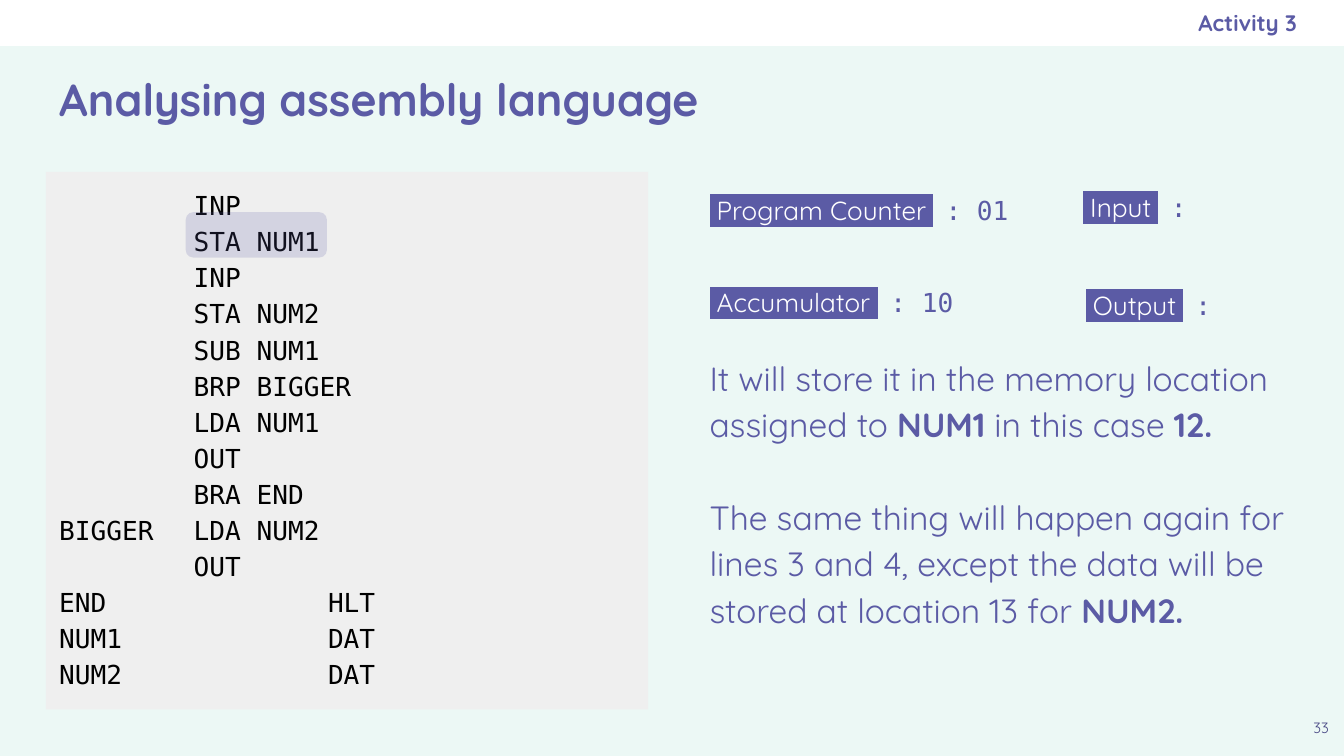
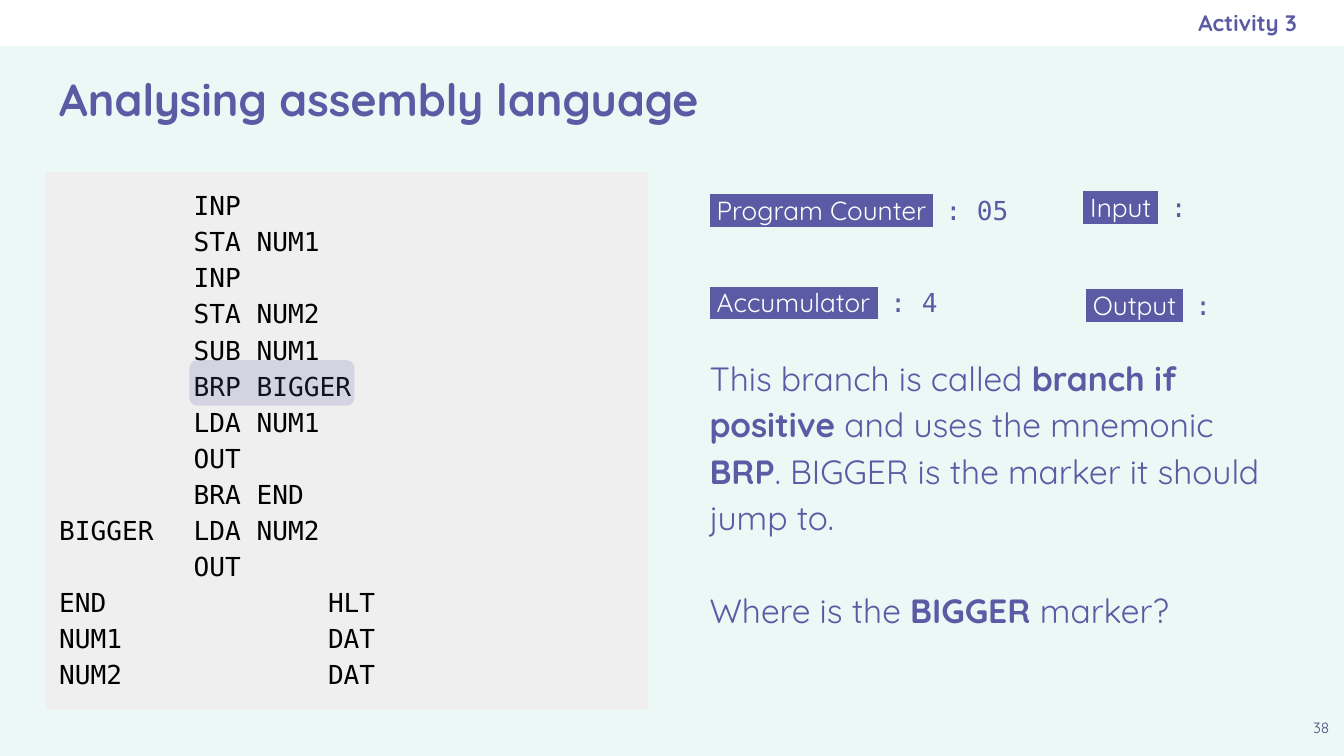
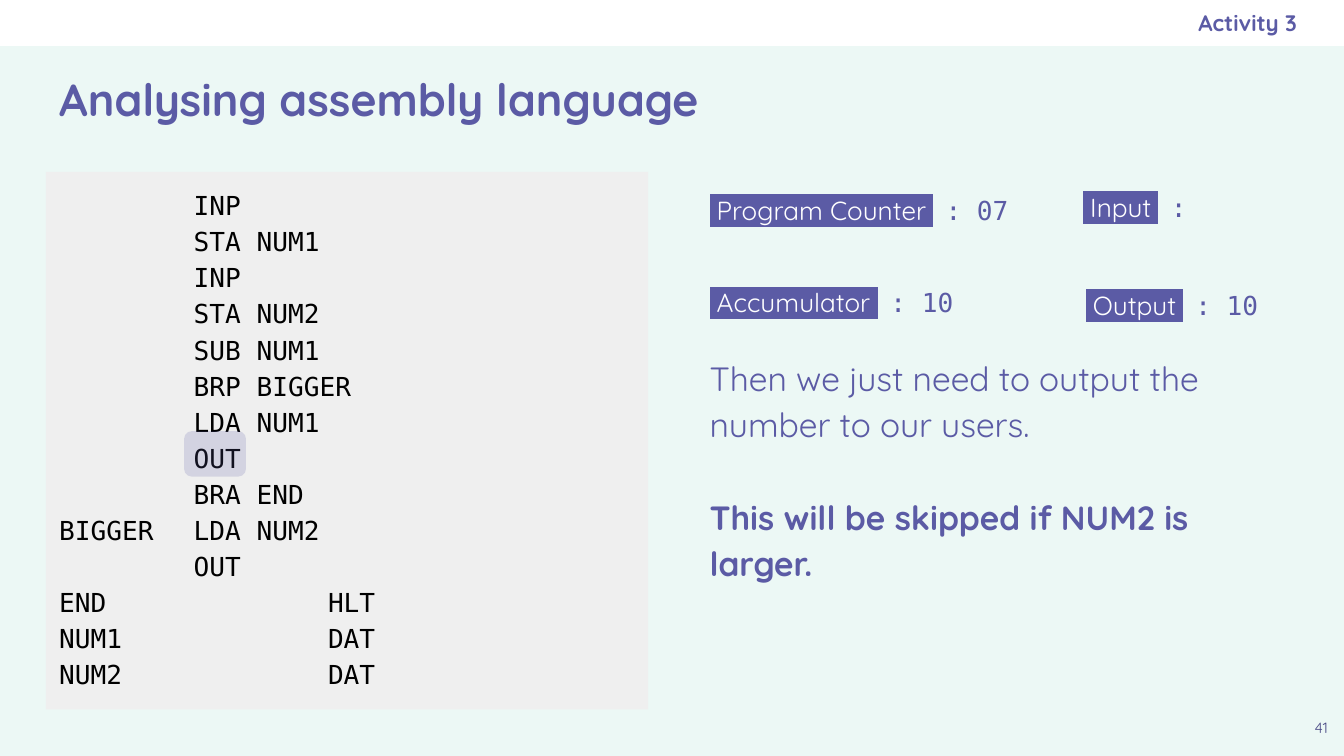
from dataclasses import dataclass

from lxml.etree import Element, SubElement
from pptx import Presentation
from pptx.dml.color import RGBColor
from pptx.enum.shapes import MSO_SHAPE
from pptx.enum.text import MSO_ANCHOR, PP_ALIGN
from pptx.oxml.ns import qn
from pptx.shapes.autoshape import Shape
from pptx.slide import Slide
from pptx.util import Cm, Pt

PURPLE = RGBColor(0x5B, 0x5B, 0xA5)
DARK_PURPLE = RGBColor(0x49, 0x49, 0x85)
MINT = RGBColor(0xEC, 0xF8, 0xF5)
GREY = RGBColor(0xEF, 0xEF, 0xEF)
WHITE = RGBColor(0xFF, 0xFF, 0xFF)
BLACK = RGBColor(0, 0, 0)

SANS = "Quicksand"
MONO = "DejaVu Sans Mono"
INSET = 0.25
TAB_WIDTH = 2.54
LINE_SPACING = 1.15
PARAGRAPH_GAP = 0.88

PROGRAM = [
    "INP",
    "STA NUM1",
    "INP",
    "STA NUM2",
    "SUB NUM1",
    "BRP BIGGER",
    "LDA NUM1",
    "OUT",
    "BRA END",
    "BIGGER \tLDA NUM2",
    "OUT",
    "END \t\tHLT",
    "NUM1\t\tDAT",
    "NUM2\t\tDAT",
]


@dataclass(frozen=True)
class Area:
    """Position and size in centimetres."""
    left: float
    top: float
    width: float
    height: float

    def lengths(self) -> tuple[Cm, Cm, Cm, Cm]:
        return Cm(self.left), Cm(self.top), Cm(self.width), Cm(self.height)


@dataclass(frozen=True)
class Span:
    text: str
    bold: bool = False


@dataclass(frozen=True)
class Register:
    name: str
    area: Area
    value_tab: float


@dataclass(frozen=True)
class Step:
    number: int
    marker: Area
    values: tuple[str, str, str, str]
    explanation: list[list[Span]]


REGISTERS = [
    Register("Program Counter", Area(13.16, 3.33, 6.2, 1.02), 4.46),
    Register("Accumulator", Area(13.16, 5.08, 6.2, 1.02), 3.42),
    Register("Input", Area(20.22, 3.28, 4.27, 1.02), 1.66),
    Register("Output", Area(20.27, 5.13, 4.27, 1.02), 2.07),
]

STEPS = [
    Step(33, Area(3.51, 4.01, 2.67, 0.86), ("01", "10", "", ""), [
        [
            Span("It will store it in the memory location assigned to "),
            Span("NUM1", True),
            Span(" in this case "),
            Span("12.", True),
        ],
        [
            Span("The same thing will happen again for lines 3 and 4, except "
                 "the data will be stored at location 13 for "),
            Span("NUM2.", True),
        ],
    ]),
    Step(38, Area(3.58, 6.81, 3.12, 0.86), ("05", "4", "", ""), [
        [
            Span("This branch is called "),
            Span("branch if positive ", True),
            Span("and uses the mnemonic "),
            Span("BRP", True),
            Span(". BIGGER is the marker it should jump to."),
        ],
        [Span("Where is the "), Span("BIGGER ", True), Span("marker?")],
    ]),
    Step(41, Area(3.48, 8.15, 1.17, 0.86), ("07", "10", "", "10"), [
        [Span("Then we just need to output the number to our users.")],
        [Span("This will be skipped if NUM2 is larger.", True)],
    ]),
]


def prepare_frame(box: Shape, anchor=MSO_ANCHOR.TOP, right: float = INSET) -> None:
    frame = box.text_frame
    frame.word_wrap = True
    frame.vertical_anchor = anchor
    frame.margin_left = frame.margin_top = frame.margin_bottom = Cm(INSET)
    frame.margin_right = Cm(right)


def add_box(page: Slide, area: Area, anchor=MSO_ANCHOR.TOP, right: float = INSET) -> Shape:
    box = page.shapes.add_textbox(*area.lengths())
    prepare_frame(box, anchor, right)
    return box


def add_panel(page: Slide, kind: MSO_SHAPE, area: Area, colour: RGBColor) -> Shape:
    panel = page.shapes.add_shape(kind, *area.lengths())
    panel.shadow.inherit = False
    panel.fill.solid()
    panel.fill.fore_color.rgb = colour
    panel.line.fill.background()
    return panel


def add_run(para, text: str, size: int, colour: RGBColor, font: str = SANS, bold: bool = False):
    run = para.add_run()
    run.text = text
    run.font.name = font
    run.font.size = Pt(size)
    run.font.bold = bold
    run.font.color.rgb = colour
    return run


def highlight(run, colour: RGBColor) -> None:
    mark = Element(qn("a:highlight"))
    SubElement(mark, qn("a:srgbClr"), val=str(colour))
    run.font._element.find(qn("a:solidFill")).addnext(mark)


def add_tabs(para, *positions: float) -> None:
    tabs = SubElement(para._p.get_or_add_pPr(), qn("a:tabLst"))
    for position in positions:
        SubElement(tabs, qn("a:tab"), pos=str(Cm(position)), algn="l")


def paragraphs(box: Shape, count: int) -> list:
    """Extend a new box to the given number of paragraphs."""
    for _ in range(count - 1):
        box.text_frame.add_paragraph()
    for para in box.text_frame.paragraphs:
        para.alignment = PP_ALIGN.LEFT
        para.line_spacing = LINE_SPACING
    return list(box.text_frame.paragraphs)


def draw_frame(page: Slide, number: int) -> None:
    """Draw the band, page number, activity name and title."""
    add_panel(page, MSO_SHAPE.RECTANGLE, Area(0, 0, 25.4, 0.87), WHITE)

    para = add_box(page, Area(24.54, 13.42, 0.86, 0.86)).text_frame.paragraphs[0]
    para.alignment = PP_ALIGN.CENTER
    add_run(para, str(number), 8, DARK_PURPLE)

    activity = add_box(page, Area(14.6, 0, 9.91, 0.87), MSO_ANCHOR.MIDDLE, right=0)
    para = activity.text_frame.paragraphs[0]
    para.alignment = PP_ALIGN.RIGHT
    add_run(para, "Activity 3", 12, PURPLE, bold=True)

    title = add_box(page, Area(0.87, 0.89, 23.67, 1.93), MSO_ANCHOR.MIDDLE)
    add_run(title.text_frame.paragraphs[0], "Analysing assembly language", 24, PURPLE, bold=True)


def draw_explanation(page: Slide, explanation: list[list[Span]]) -> None:
    box = add_box(page, Area(13.16, 6.4, 11.38, 7.04))
    for index, (para, spans) in enumerate(zip(paragraphs(box, len(explanation)), explanation)):
        if index:
            para.space_before = Cm(PARAGRAPH_GAP)
        for span in spans:
            add_run(para, span.text, 18, PURPLE, bold=span.bold)


def draw_program(page: Slide) -> None:
    """List the code, indenting each line that has no label."""
    panel = add_panel(page, MSO_SHAPE.RECTANGLE, Area(0.87, 3.25, 11.38, 10.16), GREY)
    prepare_frame(panel)
    for para, line in zip(paragraphs(panel, len(PROGRAM)), PROGRAM):
        if "\t" in line:
            add_tabs(para, TAB_WIDTH, 2 * TAB_WIDTH)
        else:
            para._p.get_or_add_pPr().set("marL", str(Cm(TAB_WIDTH)))
        add_run(para, line, 14, BLACK, MONO)


def draw_marker(page: Slide, area: Area) -> None:
    """Shade the current line of code."""
    marker = add_panel(page, MSO_SHAPE.ROUNDED_RECTANGLE, area, PURPLE)
    marker.adjustments[0] = 0.17
    colour = marker._element.spPr.find(qn("a:solidFill")).find(qn("a:srgbClr"))
    SubElement(colour, qn("a:alpha"), val="19000")


def draw_register(page: Slide, register: Register, value: str) -> None:
    para = paragraphs(add_box(page, register.area), 1)[0]
    add_tabs(para, register.value_tab)
    highlight(add_run(para, f" {register.name} ", 14, WHITE), PURPLE)
    add_run(para, f"\t: {value}".rstrip(), 14, PURPLE, MONO)


def main() -> None:
    deck = Presentation()
    deck.slide_width, deck.slide_height = Cm(25.4), Cm(14.29)
    background = deck.slide_master.background.fill
    background.solid()
    background.fore_color.rgb = MINT

    for step in STEPS:
        page = deck.slides.add_slide(deck.slide_layouts[6])
        draw_frame(page, step.number)
        draw_explanation(page, step.explanation)
        draw_program(page)
        draw_marker(page, step.marker)
        for register, value in zip(REGISTERS, step.values):
            draw_register(page, register, value)

    deck.save("out.pptx")


if __name__ == "__main__":
    main()
